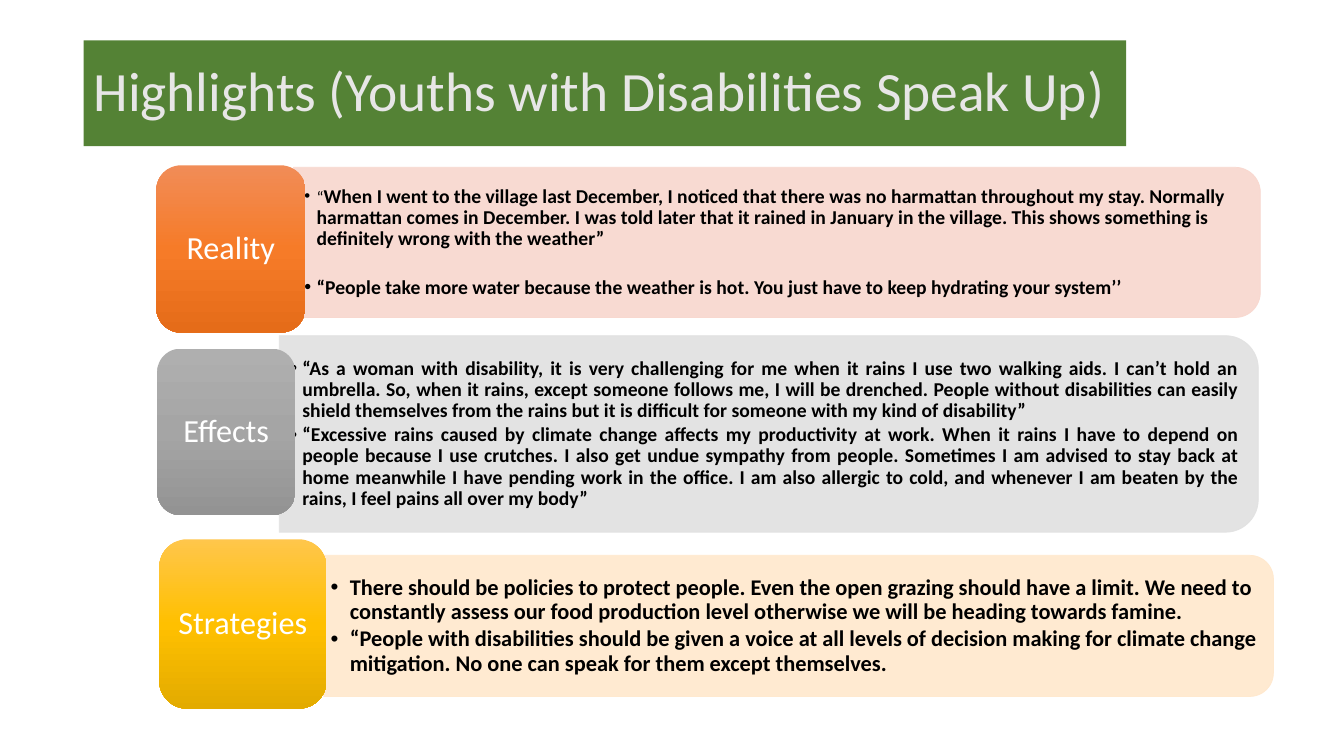
from lxml import etree
from pptx import Presentation
from pptx.dml.color import RGBColor
from pptx.enum.shapes import MSO_SHAPE
from pptx.enum.text import MSO_ANCHOR, PP_ALIGN
from pptx.oxml.ns import qn
from pptx.util import Inches, Pt

RECT = MSO_SHAPE.RECTANGLE
TILE = MSO_SHAPE.ROUNDED_RECTANGLE
PANEL = MSO_SHAPE.ROUND_2_SAME_RECTANGLE
MIDDLE = MSO_ANCHOR.MIDDLE
LEFT, CENTER, JUSTIFY = PP_ALIGN.LEFT, PP_ALIGN.CENTER, PP_ALIGN.JUSTIFY
FONT = "Calibri"
QUOTE_INSET = 0.08

SECTIONS = [
    dict(
        heading="Reality", tile=(1.55, 1.64, 1.48, 1.66),
        shades=("F18C57", "F67B28", "E56C19"),
        panel=(2.91, 1.66, 9.59, 1.49), tint="F8D7CE",
        size=14, indent=0.12, margins=(0.11, 0.06), align=LEFT, gap=17.5,
        quotes=[
            [("“", 12, False),
             ("When I went to the village last December, I noticed that there was no harmattan throughout my stay. Normally harmattan comes in December. I was told later that it rained in January in the village. This shows something is definitely wrong with the weather”", 14, True)],
            "“People take more water because the weather is hot. You just have to keep hydrating your system’’",
        ]),
    dict(
        heading="Effects", tile=(1.56, 3.46, 1.37, 1.65),
        shades=("AFAFAF", "A5A5A5", "939393"),
        panel=(2.77, 3.33, 9.71, 1.95), tint="E1E1E1",
        size=14, indent=0.12, margins=(0.11, 0.06), align=JUSTIFY, gap=0,
        quotes=[
            "“As a woman with disability, it is very challenging for me when it rains I use two walking aids. I can’t hold an umbrella. So, when it rains, except someone follows me, I will be drenched. People without disabilities can easily shield themselves from the rains but it is difficult for someone with my kind of disability”",
            "“Excessive rains caused by climate change affects my productivity at work. When it rains I have to depend on people because I use crutches. I also get undue sympathy from people. Sometimes I am advised to stay back at home meanwhile I have pending work in the office. I am also allergic to cold, and whenever I am beaten by the rains, I feel pains all over my body”",
        ]),
    dict(
        heading="Strategies", tile=(1.58, 5.35, 1.66, 1.68),
        shades=("FFC64B", "FFC000", "E3AB00"),
        panel=(3.21, 5.51, 9.42, 1.4), tint="FFE8CC",
        size=16, indent=0.19, margins=(0.07, 0.03), align=LEFT, gap=0,
        quotes=[
            "There should be policies to protect people. Even the open grazing should have a limit. We need to constantly assess our food production level otherwise we will be heading towards famine.",
            "“People with disabilities should be given a voice at all levels of decision making for climate change mitigation. No one can speak for them except themselves.",
        ]),
]


def rgb(hex_color):
    """Turn a hex string into a colour."""
    return RGBColor.from_string(hex_color)


def set_frame(frame, across, down):
    """Wrap a text frame, centre it vertically and set its margins."""
    frame.word_wrap = True
    frame.vertical_anchor = MIDDLE
    frame.margin_left = frame.margin_right = Inches(across)
    frame.margin_top = frame.margin_bottom = Inches(down)


def write(paragraph, text, size, color, bold=False, align=LEFT, before=0, after=0):
    """Fill a paragraph with a string or with (text, size, bold) pieces."""
    paragraph.alignment = align
    paragraph.line_spacing = 0.9
    paragraph.space_before = Pt(before)
    paragraph.space_after = Pt(after)
    pieces = [(text, size, bold)] if isinstance(text, str) else text
    for words, points, heavy in pieces:
        run = paragraph.add_run()
        run.text = words
        run.font.name = FONT
        run.font.size = Pt(points)
        run.font.bold = heavy
        run.font.color.rgb = rgb(color)


def add_bullet(paragraph, indent):
    """Give a paragraph a hanging bullet."""
    props = paragraph._p.get_or_add_pPr()
    props.set("marL", str(Inches(indent)))
    props.set("indent", str(-Inches(indent)))
    etree.SubElement(props, qn("a:buFont")).set("typeface", "Arial")
    etree.SubElement(props, qn("a:buChar")).set("char", "•")


def add_block(slide, kind, box, color):
    """Add a plain filled shape without line or shadow."""
    block = slide.shapes.add_shape(kind, *map(Inches, box))
    block.shadow.inherit = False
    block.line.fill.background()
    block.fill.solid()
    block.fill.fore_color.rgb = rgb(color)
    return block


def shade_down(block, shades):
    """Replace a solid fill by an even top-to-bottom gradient."""
    solid = block._element.spPr.find(qn("a:solidFill"))
    gradient = etree.Element(qn("a:gradFill"), rotWithShape="1")
    stops = etree.SubElement(gradient, qn("a:gsLst"))
    for step, shade in enumerate(shades):
        stop = etree.SubElement(stops, qn("a:gs"), pos=str(step * 50000))
        etree.SubElement(stop, qn("a:srgbClr"), val=shade)
    etree.SubElement(gradient, qn("a:lin"), ang="5400000", scaled="0")
    solid.getparent().replace(solid, gradient)


def add_title(slide, box):
    """Place the green title bar."""
    bar = add_block(slide, RECT, box, "548235")
    set_frame(bar.text_frame, 0.1, 0.05)
    write(bar.text_frame.paragraphs[0],
          "Highlights (Youths with Disabilities Speak Up)", 39.6, "E7E6E6")


def add_panel(slide, box, section):
    """Place a tinted panel, rounded on its right side, with its quotes."""
    left, top, width, height = box
    upright = (left + (width - height) / 2, top + (height - width) / 2, height, width)
    panel = add_block(slide, PANEL, upright, section["tint"])
    panel.rotation = 90
    panel.line.color.rgb = rgb(section["tint"])
    panel.line.width = Pt(0.5)
    for tint in panel._element.spPr.iter(qn("a:srgbClr")):
        etree.SubElement(tint, qn("a:alpha"), val="90000")

    quote_box = (left, top + QUOTE_INSET, width - QUOTE_INSET, height - 2 * QUOTE_INSET)
    frame = slide.shapes.add_textbox(*map(Inches, quote_box)).text_frame
    set_frame(frame, *section["margins"])
    for index, quote in enumerate(section["quotes"]):
        paragraph = frame.add_paragraph() if index else frame.paragraphs[0]
        write(paragraph, quote, section["size"], "000000", bold=True,
              align=section["align"], before=section["gap"] if index else 0,
              after=section["size"] * 0.15)
        add_bullet(paragraph, section["indent"])


def add_tile(slide, box, section):
    """Place the shaded tile that names a section."""
    tile = add_block(slide, TILE, box, section["shades"][1])
    shade_down(tile, section["shades"])
    set_frame(tile.text_frame, 0.05, 0.05)
    write(tile.text_frame.paragraphs[0], section["heading"], 23, "FFFFFF", align=CENTER)


def main():
    """Build the slide and save it."""
    deck = Presentation()
    deck.slide_width, deck.slide_height = Inches(13.33), Inches(7.5)
    slide = deck.slides.add_slide(deck.slide_layouts[6])
    for section in SECTIONS:
        add_panel(slide, section["panel"], section)
        add_tile(slide, section["tile"], section)
    add_title(slide, (0.83, 0.4, 10.34, 1.05))
    deck.save("out.pptx")


if __name__ == "__main__":
    main()
